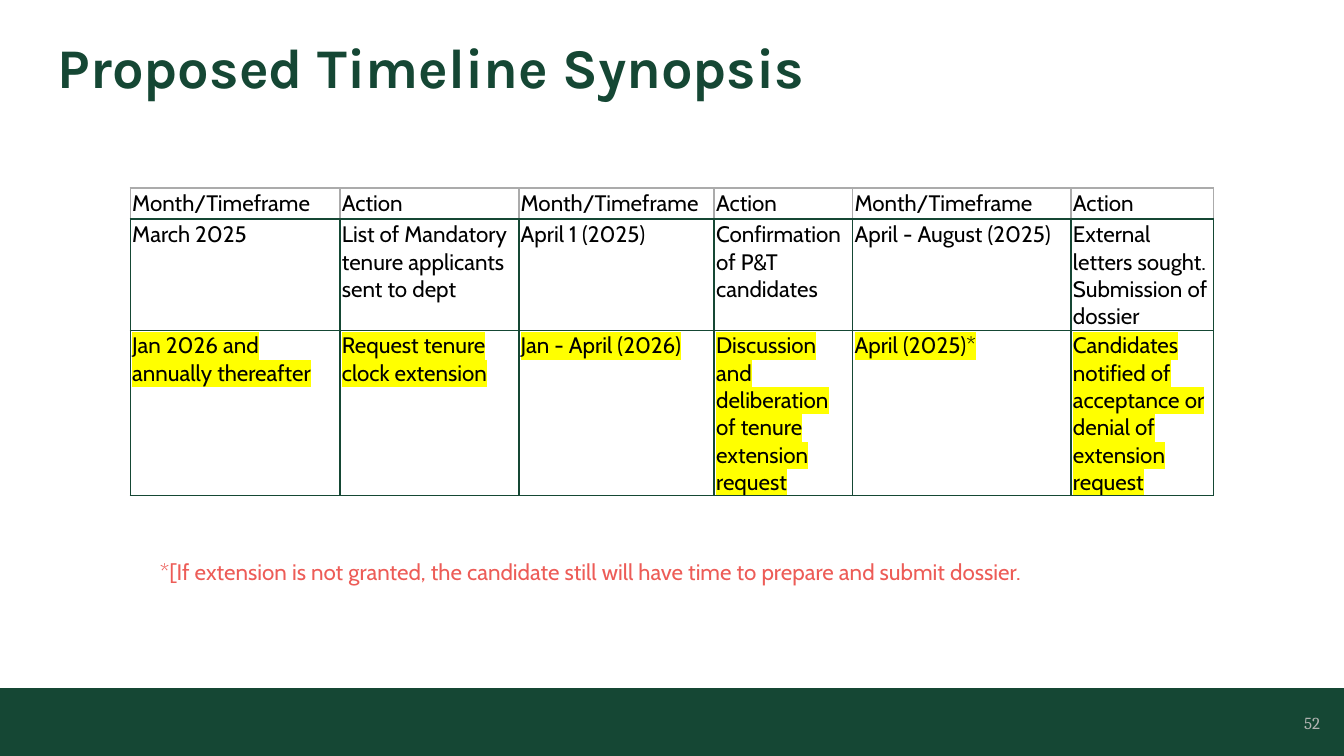
from dataclasses import dataclass

from pptx import Presentation
from pptx.dml.color import RGBColor
from pptx.enum.shapes import MSO_SHAPE
from pptx.enum.text import MSO_ANCHOR, MSO_AUTO_SIZE, PP_ALIGN
from pptx.oxml.ns import qn
from pptx.oxml.xmlchemy import OxmlElement
from pptx.util import Inches, Pt

RECTANGLE = MSO_SHAPE.RECTANGLE
TOP, MIDDLE = MSO_ANCHOR.TOP, MSO_ANCHOR.MIDDLE
LEFT, RIGHT = PP_ALIGN.LEFT, PP_ALIGN.RIGHT
NO_FIT, GROW = MSO_AUTO_SIZE.NONE, MSO_AUTO_SIZE.SHAPE_TO_FIT_TEXT

GRID_COLUMNS, GRID_ROWS = 100, 56.25
UNIT = Inches(0.1)
CELL_INSET = Pt(1)
MARGINS = ("margin_left", "margin_top", "margin_right", "margin_bottom")


@dataclass(frozen=True)
class Theme:
    green: str = "154734"
    grey: str = "ABABAB"
    number: str = "B2B4B2"
    red: str = "ED5C57"
    black: str = "000000"
    white: str = "FFFFFF"
    highlight: str = "FFFF00"
    title_font: str = "Karla"
    body_font: str = "Cabin"
    number_font: str = "Cambria"
    title_size: int = 30
    body_size: int = 12
    number_size: int = 9
    border_width: int = 1


THEME = Theme()

TITLE_TEXT = {"name": THEME.title_font, "size": Pt(THEME.title_size), "bold": True}
BODY_TEXT = {"name": THEME.body_font, "size": Pt(THEME.body_size)}
NUMBER_TEXT = {"name": THEME.number_font, "size": Pt(THEME.number_size)}

COLUMN_WIDTHS = [15.6, 13.3, 14.55, 10.3, 16.25, 10.6]
ROW_HEIGHT = 2.3
TIMELINE = [
    ["Month/Timeframe", "Action", "Month/Timeframe", "Action", "Month/Timeframe\u00a0", "Action"],
    [
        "March 2025",
        "List of Mandatory tenure applicants sent to dept",
        "April 1 (2025)",
        "Confirmation of P&T candidates",
        "April - August (2025)",
        "External letters sought.\u00a0\nSubmission of dossier",
    ],
    [
        "Jan 2026 and annually thereafter",
        "Request tenure clock extension",
        "Jan - April (2026)",
        "Discussion and deliberation of tenure extension request",
        "April (2025)*",
        "Candidates notified of acceptance or denial of extension request",
    ],
]


def to_lengths(box):
    return [round(value * UNIT) for value in box]


def apply_format(target, values):
    for name, value in values.items():
        setattr(target, name, value)


def color_element(tag, color):
    element = OxmlElement(tag)
    value = OxmlElement("a:srgbClr")
    value.set("val", color)
    element.append(value)
    return element


def write_text(frame, text, text_format, color, alignment=LEFT, line_spacing=None, highlight=None):
    for index, line in enumerate(text.split("\n")):
        paragraph = frame.add_paragraph() if index else frame.paragraphs[0]
        apply_format(paragraph, {"alignment": alignment, "line_spacing": line_spacing})
        run = paragraph.add_run()
        run.text = line
        apply_format(run.font, text_format)
        run.font.color.rgb = RGBColor.from_string(color)
        if highlight:
            latin = run._r.get_or_add_rPr().find(qn("a:latin"))
            latin.addprevious(color_element("a:highlight", highlight))


def add_rectangle(slide, box, color):
    shape = slide.shapes.add_shape(RECTANGLE, *to_lengths(box))
    shape.shadow.inherit = False
    shape.fill.solid()
    shape.fill.fore_color.rgb = RGBColor.from_string(color)
    shape.line.fill.background()
    return shape


def add_title(slide, box):
    frame = slide.shapes.add_textbox(*to_lengths(box)).text_frame
    apply_format(frame, {**dict.fromkeys(MARGINS, 0), "word_wrap": True, "vertical_anchor": TOP})
    write_text(frame, "Proposed Timeline Synopsis", TITLE_TEXT, THEME.green, line_spacing=0.9)


def add_footer(slide, box):
    left, top, width, height = box
    add_rectangle(slide, box, THEME.green)
    number_box = (left + width - 6.7, top + 1.1, 5.9, 3)
    frame = slide.shapes.add_textbox(*to_lengths(number_box)).text_frame
    apply_format(frame, {"word_wrap": True, "auto_size": NO_FIT, "vertical_anchor": MIDDLE})
    write_text(frame, "52", NUMBER_TEXT, THEME.number, alignment=RIGHT)


def set_borders(cell, colors):
    properties = cell._tc.get_or_add_tcPr()
    for side, color in colors.items():
        line = OxmlElement(f"a:ln{side}")
        line.set("w", str(Pt(THEME.border_width)))
        line.append(color_element("a:solidFill", color))
        properties.append(line)


def add_timeline(slide, box):
    shape = slide.shapes.add_table(len(TIMELINE), len(COLUMN_WIDTHS), *to_lengths(box))
    table = shape.table
    apply_format(table, {"first_row": False, "horz_banding": False})
    for column, width in zip(table.columns, to_lengths(COLUMN_WIDTHS)):
        column.width = width
    for row_index, texts in enumerate(TIMELINE):
        outer = THEME.green if row_index else THEME.grey
        highlight = THEME.highlight if row_index == len(TIMELINE) - 1 else None
        for column_index, text in enumerate(texts):
            cell = table.cell(row_index, column_index)
            apply_format(cell, dict.fromkeys(MARGINS, CELL_INSET))
            set_borders(cell, {"L": outer, "R": outer, "T": outer, "B": THEME.green})
            cell.fill.background()
            write_text(cell.text_frame, text, BODY_TEXT, THEME.black, highlight=highlight)


def add_footnote(slide, box):
    frame = add_rectangle(slide, box, THEME.white).text_frame
    apply_format(
        frame,
        {
            **dict.fromkeys(MARGINS, 0),
            "word_wrap": False,
            "auto_size": GROW,
            "vertical_anchor": MIDDLE,
        },
    )
    text = "*[If extension is not granted, the candidate still will have time to prepare and submit dossier."
    write_text(frame, text, BODY_TEXT, THEME.red)


def main():
    presentation = Presentation()
    presentation.slide_width, presentation.slide_height = to_lengths((GRID_COLUMNS, GRID_ROWS))
    slide = presentation.slides.add_slide(presentation.slide_layouts[6])
    add_footer(slide, (-0.4, 51.2, GRID_COLUMNS + 0.4, 5.1))
    add_title(slide, (4.3, 3, 91.4, 4.4))
    add_timeline(slide, (9.7, 14, sum(COLUMN_WIDTHS), ROW_HEIGHT * len(TIMELINE)))
    add_footnote(slide, (11.9, 41.5, 66.4, 2))
    presentation.save("out.pptx")


if __name__ == "__main__":
    main()
